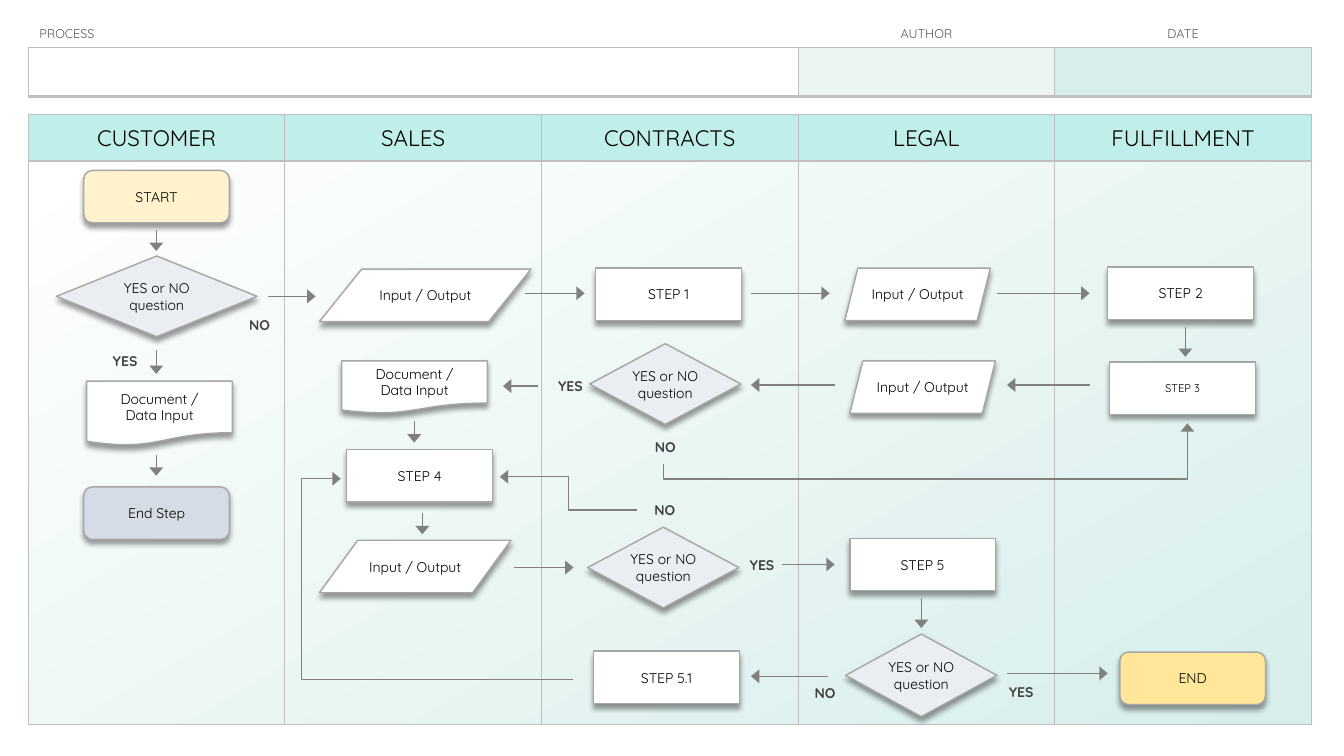
from lxml.etree import SubElement
from pptx import Presentation
from pptx.dml.color import RGBColor
from pptx.enum.shapes import MSO_CONNECTOR, MSO_SHAPE
from pptx.enum.text import MSO_ANCHOR, PP_ALIGN
from pptx.oxml.ns import qn
from pptx.util import Pt

STEP = MSO_SHAPE.FLOWCHART_PROCESS
TERMINAL = MSO_SHAPE.FLOWCHART_ALTERNATE_PROCESS
ROUNDED = MSO_SHAPE.ROUNDED_RECTANGLE
DATA = MSO_SHAPE.FLOWCHART_DATA
SLANTED = MSO_SHAPE.PARALLELOGRAM
DOCUMENT = MSO_SHAPE.FLOWCHART_DOCUMENT
DECISION = MSO_SHAPE.FLOWCHART_DECISION

LEFT = 20.2
LANE_WIDTH = 183.3
QUESTION = "YES or NO\nquestion"
DOCUMENT_TEXT = "Document /\nData Input"
NO_TABLE_STYLE = "{2D5ABB26-0587-4C30-8999-92F81FD0307C}"


def color(hex_string):
    return RGBColor.from_string(hex_string)


class Flowchart:
    font = "Quicksand"
    ink = "000000"
    border = "BFBFBF"
    outline = "A6A6A6"
    arrow_color = "808080"
    label_color = "404040"

    def __init__(self, page):
        self.page = page

    def add_text(self, frame, text, size, ink, bold=False, align=PP_ALIGN.CENTER):
        for index, line in enumerate(text.split("\n")):
            para = frame.add_paragraph() if index else frame.paragraphs[0]
            para.alignment = align
            span = para.add_run()
            span.text = line
            span.font.name = self.font
            span.font.size = Pt(size)
            span.font.bold = bold
            span.font.color.rgb = color(ink)

    def set_frame(self, frame):
        frame.word_wrap = True
        frame.vertical_anchor = MSO_ANCHOR.MIDDLE
        frame.margin_left = frame.margin_right = Pt(1.5)
        frame.margin_top = frame.margin_bottom = Pt(1.5)

    def background(self, left, top, width, height, start, end):
        box = self.page.shapes.add_shape(
            MSO_SHAPE.RECTANGLE, Pt(left), Pt(top), Pt(width), Pt(height))
        box.shadow.inherit = False
        box.line.fill.background()
        box.fill.gradient()
        box.fill.gradient_angle = 300
        for stop, shade, position in zip(box.fill.gradient_stops, (start, end), (0, 1)):
            stop.color.rgb = color(shade)
            stop.position = position

    def table(self, left, top, widths, heights):
        frame = self.page.shapes.add_table(
            len(heights), len(widths), Pt(left), Pt(top), Pt(sum(widths)), Pt(sum(heights)))
        table = frame.table
        table.first_row = table.horz_banding = False
        table._tbl.tblPr.find(qn("a:tableStyleId")).text = NO_TABLE_STYLE
        for column, width in zip(table.columns, widths):
            column.width = Pt(width)
        for row, height in zip(table.rows, heights):
            row.height = Pt(height)
        return table

    def cell(self, cell, borders, fill=None, text="", size=16, ink=ink,
             align=PP_ALIGN.CENTER, indent=1):
        cell.vertical_anchor = MSO_ANCHOR.MIDDLE
        cell.margin_left, cell.margin_right = Pt(indent), Pt(1)
        cell.margin_top, cell.margin_bottom = Pt(1), Pt(0)
        properties = cell._tc.get_or_add_tcPr()
        for side in "LRTB":
            if side in borders:
                line = SubElement(properties, qn(f"a:ln{side}"), w=str(Pt(borders[side])))
                solid = SubElement(line, qn("a:solidFill"))
                SubElement(solid, qn("a:srgbClr"), val=self.border)
        if fill:
            cell.fill.solid()
            cell.fill.fore_color.rgb = color(fill)
        else:
            cell.fill.background()
        if text:
            self.add_text(cell.text_frame, text, size, ink, align=align)

    def node(self, kind, left, top, text, fill="FFFFFF", width=104, height=37.5, size=10):
        box = self.page.shapes.add_shape(kind, Pt(left), Pt(top), Pt(width), Pt(height))
        box.fill.solid()
        box.fill.fore_color.rgb = color(fill)
        box.line.color.rgb = color(self.outline)
        box.line.width = Pt(1)
        box.shadow.inherit = False
        effects = box._element.spPr.find(qn("a:effectLst"))
        shadow = SubElement(effects, qn("a:outerShdw"), blurRad=str(Pt(4)),
                            dist=str(Pt(3)), dir="5400000", algn="t", rotWithShape="0")
        black = SubElement(shadow, qn("a:srgbClr"), val="000000")
        SubElement(black, qn("a:alpha"), val="40000")
        self.set_frame(box.text_frame)
        self.add_text(box.text_frame, text, size, self.ink)

    def question(self, left, top, width=108, height=57.6):
        self.node(DECISION, left, top, QUESTION, "EAEEF3", width, height)

    def label(self, text, center_x, center_y, width=40, height=18):
        box = self.page.shapes.add_textbox(
            Pt(center_x - width / 2), Pt(center_y - height / 2), Pt(width), Pt(height))
        self.set_frame(box.text_frame)
        self.add_text(box.text_frame, text, 10, self.label_color, bold=True)

    def arrow(self, x1, y1, x2, y2, kind=MSO_CONNECTOR.STRAIGHT):
        connector = self.page.shapes.add_connector(kind, Pt(x1), Pt(y1), Pt(x2), Pt(y2))
        connector.line.color.rgb = color(self.arrow_color)
        connector.line.width = Pt(1)
        SubElement(connector.line._get_or_add_ln(), qn("a:tailEnd"),
                   type="triangle", w="lg", len="med")
        SubElement(connector._element.spPr, qn("a:effectLst"))
        return connector

    def elbow(self, x1, y1, x2, y2, bend, upright=False):
        if upright:
            middle_x, middle_y = (x1 + x2) / 2, (y1 + y2) / 2
            half_width, half_height = abs(y2 - y1) / 2, abs(x2 - x1) / 2
            x1, x2 = middle_x - half_width, middle_x + half_width
            y1, y2 = middle_y - half_height, middle_y + half_height
        connector = self.arrow(x1, y1, x2, y2, MSO_CONNECTOR.ELBOW)
        properties = connector._element.spPr
        if upright:
            properties.find(qn("a:xfrm")).set("rot", "16200000")
        guides = properties.find(qn("a:prstGeom")).find(qn("a:avLst"))
        SubElement(guides, qn("a:gd"), name="adj1", fmla=f"val {round(bend * 100000)}")


def main():
    deck = Presentation()
    deck.slide_width, deck.slide_height = Pt(960), Pt(540)
    chart = Flowchart(deck.slides.add_slide(deck.slide_layouts[6]))

    chart.background(LEFT, 115.2, 5 * LANE_WIDTH, 402, "FFFFFF", "D7EEEB")
    grid = dict.fromkeys("LRTB", 1)
    lanes = chart.table(LEFT, 82, [LANE_WIDTH] * 5, [33, 402.5])
    for column, name in enumerate(["CUSTOMER", "SALES", "CONTRACTS", "LEGAL", "FULFILLMENT"]):
        chart.cell(lanes.cell(0, column), grid, "BFEEEB", name)
        chart.cell(lanes.cell(1, column), grid)

    header = chart.table(LEFT, 13.9, [3 * LANE_WIDTH, LANE_WIDTH, LANE_WIDTH], [20, 35])
    for column, (name, fill, align, indent) in enumerate([
            ("PROCESS", "FFFFFF", PP_ALIGN.LEFT, 8),
            ("AUTHOR", "EDF5F3", PP_ALIGN.CENTER, 1),
            ("DATE", "D7EEEB", PP_ALIGN.CENTER, 1)]):
        chart.cell(header.cell(0, column), {"B": 1}, None, name, 9, "595959", align, indent)
        chart.cell(header.cell(1, column), {**grid, "B": 2.25}, fill)

    for kind, left, top, text, *style in [
            (TERMINAL, 59.8, 121.7, "START", "FFF2CC"),
            (DOCUMENT, 61.9, 272.2, DOCUMENT_TEXT, "FFFFFF", 104, 46),
            (TERMINAL, 59.8, 347.8, "End Step", "D6DCE5"),
            (DATA, 228.2, 192.2, "Input / Output", "FFFFFF", 151.2),
            (DOCUMENT, 244.1, 257.8, DOCUMENT_TEXT),
            (STEP, 247.7, 321.1, "STEP 4"),
            (DATA, 228.2, 385.9, "Input / Output", "FFFFFF", 136.8),
            (STEP, 425.5, 191.5, "STEP 1"),
            (STEP, 424.1, 465.1, "STEP 5.1"),
            (SLANTED, 603.4, 191.5, "Input / Output"),
            (SLANTED, 607, 257.8, "Input / Output"),
            (STEP, 607, 384.5, "STEP 5"),
            (STEP, 791.3, 190.8, "STEP 2"),
            (STEP, 792.7, 258.5, "STEP 3", "FFFFFF", 104, 37.5, 8),
            (ROUNDED, 799.9, 465.8, "END", "FFE699")]:
        chart.node(kind, left, top, text, *style)

    for place in [(40.3, 182.9, 143.3), (421.2, 245.5), (419.8, 376.6),
                  (604.1, 452.9, 108, 59)]:
        chart.question(*place)

    for text, centers in {
            "YES": [(89.3, 258.1), (407.5, 275.4), (544.3, 403.6), (729.4, 494.3)],
            "NO": [(185.4, 232.2), (475.2, 319.3), (474.8, 364), (589.3, 495)]}.items():
        for center in centers:
            chart.label(text, *center)

    for x1, x2, y in [
            (191.5, 225.4, 211.7), (375.1, 417.6, 209.5), (536.4, 592.6, 209.5),
            (712.1, 778.3, 209.5), (778.3, 719.3, 275), (596.2, 536.4, 275),
            (384.5, 359.3, 275.8), (367.2, 409.7, 405.4), (558.7, 596.2, 403.2),
            (591.8, 536.4, 483.1), (719.3, 791.3, 481)]:
        chart.arrow(x1, y, x2, y)
    for x, y1, y2 in [
            (111.6, 164.2, 179.3), (111.6, 249.8, 267.1), (111.6, 324.7, 339.8),
            (295.9, 301, 316.1), (301.7, 366.5, 381.6), (846.7, 233.3, 254.9),
            (658.1, 427, 448.6)]:
        chart.arrow(x, y1, x, y2)

    chart.elbow(473.8, 331.2, 848.2, 302.4, -0.38, upright=True)
    chart.elbow(455, 364.3, 357.1, 340.6, 0.5)
    chart.elbow(409, 485.3, 243.4, 342, 1.17)

    deck.save("out.pptx")


if __name__ == "__main__":
    main()
